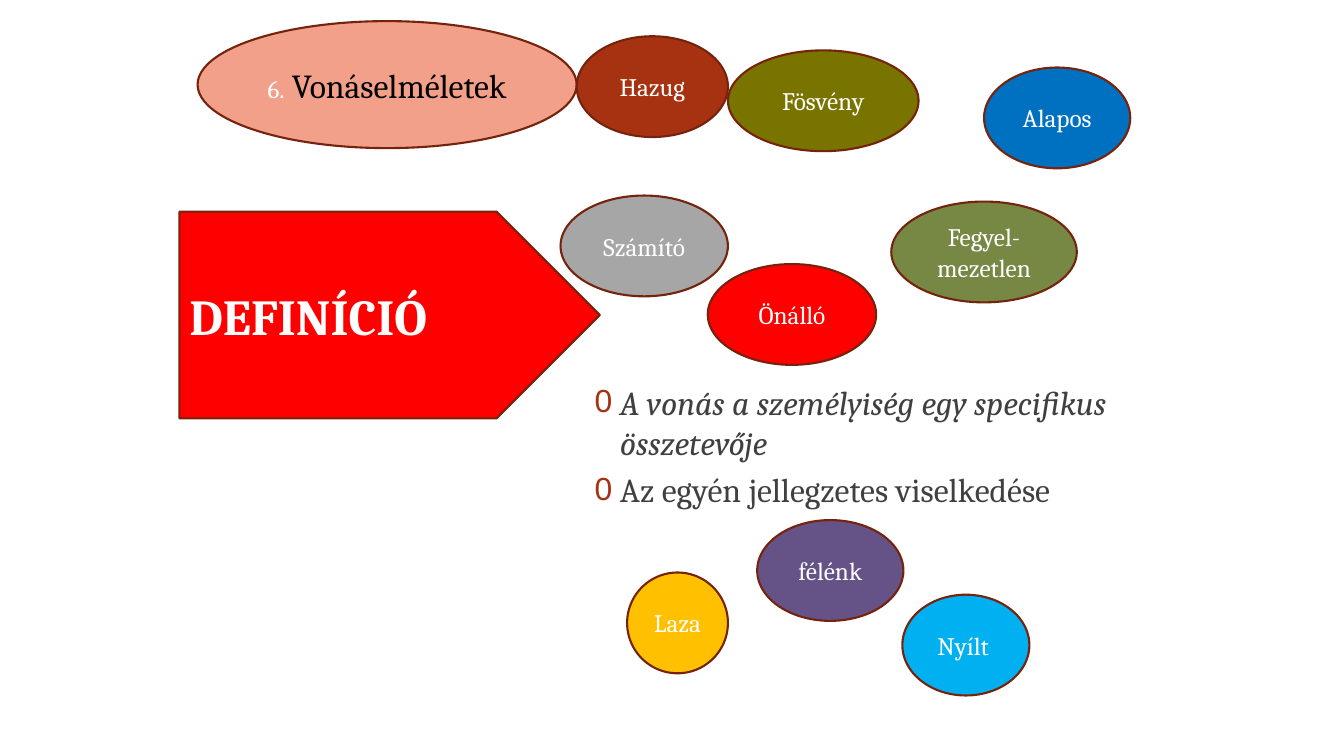
from lxml import etree
from pptx import Presentation
from pptx.dml.color import RGBColor
from pptx.enum.shapes import MSO_SHAPE
from pptx.enum.text import MSO_ANCHOR, PP_ALIGN
from pptx.oxml.ns import qn
from pptx.util import Inches, Pt

OVAL, PENTAGON = MSO_SHAPE.OVAL, MSO_SHAPE.PENTAGON
MIDDLE = MSO_ANCHOR.MIDDLE
LEFT, CENTER = PP_ALIGN.LEFT, PP_ALIGN.CENTER

FONT = "Cambria"
WHITE = RGBColor(0xFF, 0xFF, 0xFF)
BLACK = RGBColor(0, 0, 0)
GREY_TEXT = RGBColor(0x40, 0x40, 0x40)
OUTLINE = RGBColor(0x75, 0x23, 0x0C)
RED = RGBColor(0xFF, 0, 0)
SALMON = RGBColor(0xF2, 0xA0, 0x89)
RUST = RGBColor(0xA6, 0x32, 0x12)
SILVER = RGBColor(0xA6, 0xA6, 0xA6)
PURPLE = RGBColor(0x65, 0x52, 0x87)
OLIVE = RGBColor(0x79, 0x74, 0)
SKY = RGBColor(0, 0xB0, 0xF0)
GREEN = RGBColor(0x76, 0x88, 0x43)
BLUE = RGBColor(0, 0x70, 0xC0)
GOLD = RGBColor(0xFF, 0xC0, 0)

# Text, italic
definition = [
    ("A vonás a személyiség egy specifikus összetevője", True),
    ("Az egyén jellegzetes viselkedése", False),
]
DEFINITION_BOX = (5.8, 3.74, 5.54, 1.36)

# Runs are (text, size, colour, bold)
heading = [("DEFINÍCIÓ", 36, WHITE, True)]
topic = [("6.", 18, WHITE, False), (" Vonáselméletek", 24, BLACK, False)]

# Trait, left, top, width, fill
TRAIT_HEIGHT = 1
traits = [
    ("Hazug", 5.72, 0.36, 1.5, RUST),
    ("Számító", 5.56, 1.94, 1.66, SILVER),
    ("félénk", 7.51, 5.16, 1.45, PURPLE),
    ("Fösvény", 7.22, 0.5, 1.89, OLIVE),
    ("Önálló", 7.02, 2.62, 1.67, RED),
    ("Nyílt ", 8.95, 5.9, 1.26, SKY),
    ("Fegyel-mezetlen", 8.84, 2, 1.84, GREEN),
    ("Alapos", 9.76, 0.67, 1.45, BLUE),
    ("Laza ", 6.22, 5.68, 1, GOLD),
]


def add_run(paragraph, text, size, color, bold=False, italic=False):
    run = paragraph.add_run()
    run.text = text
    font = run.font
    font.name, font.size = FONT, Pt(size)
    font.bold, font.italic = bold, italic
    font.color.rgb = color


def add_label(slide, preset, box, fill, runs, align=CENTER):
    """Add an outlined shape with one paragraph of text."""
    label = slide.shapes.add_shape(preset, *map(Inches, box))
    label.shadow.inherit = False
    label.fill.solid()
    label.fill.fore_color.rgb = fill
    label.line.color.rgb = OUTLINE
    label.line.width = Pt(1.5)
    frame = label.text_frame
    frame.word_wrap = True
    frame.vertical_anchor = MIDDLE
    paragraph = frame.paragraphs[0]
    paragraph.alignment = align
    for run in runs:
        add_run(paragraph, *run)


def add_bullet(paragraph):
    properties = paragraph._p.get_or_add_pPr()
    properties.set("marL", str(Inches(0.25)))
    properties.set("indent", str(-Inches(0.25)))
    color = etree.SubElement(properties, qn("a:buClr"))
    etree.SubElement(color, qn("a:srgbClr"), val=str(RUST))
    etree.SubElement(properties, qn("a:buSzPct"), val="95000")
    etree.SubElement(properties, qn("a:buFont"), typeface="Arial")
    etree.SubElement(properties, qn("a:buChar"), char="0")


def add_definition(slide):
    frame = slide.shapes.add_textbox(*map(Inches, DEFINITION_BOX)).text_frame
    frame.word_wrap = True
    frame.vertical_anchor = MIDDLE
    for index, (text, italic) in enumerate(definition):
        paragraph = frame.add_paragraph() if index else frame.paragraphs[0]
        add_bullet(paragraph)
        if index:
            paragraph.space_before = Pt(4.8)
        add_run(paragraph, text, 24, GREY_TEXT, italic=italic)


def main():
    deck = Presentation()
    deck.slide_width, deck.slide_height = Inches(13.33), Inches(7.5)
    slide = deck.slides.add_slide(deck.slide_layouts[6])
    add_definition(slide)
    add_label(slide, PENTAGON, (1.78, 2.1, 4.17, 2.05), RED, heading, LEFT)
    add_label(slide, OVAL, (1.96, 0.21, 3.76, 1.26), SALMON, topic)
    for trait, left, top, width, fill in traits:
        box = (left, top, width, TRAIT_HEIGHT)
        add_label(slide, OVAL, box, fill, [(trait, 18, WHITE)])
    deck.save("out.pptx")


if __name__ == "__main__":
    main()
